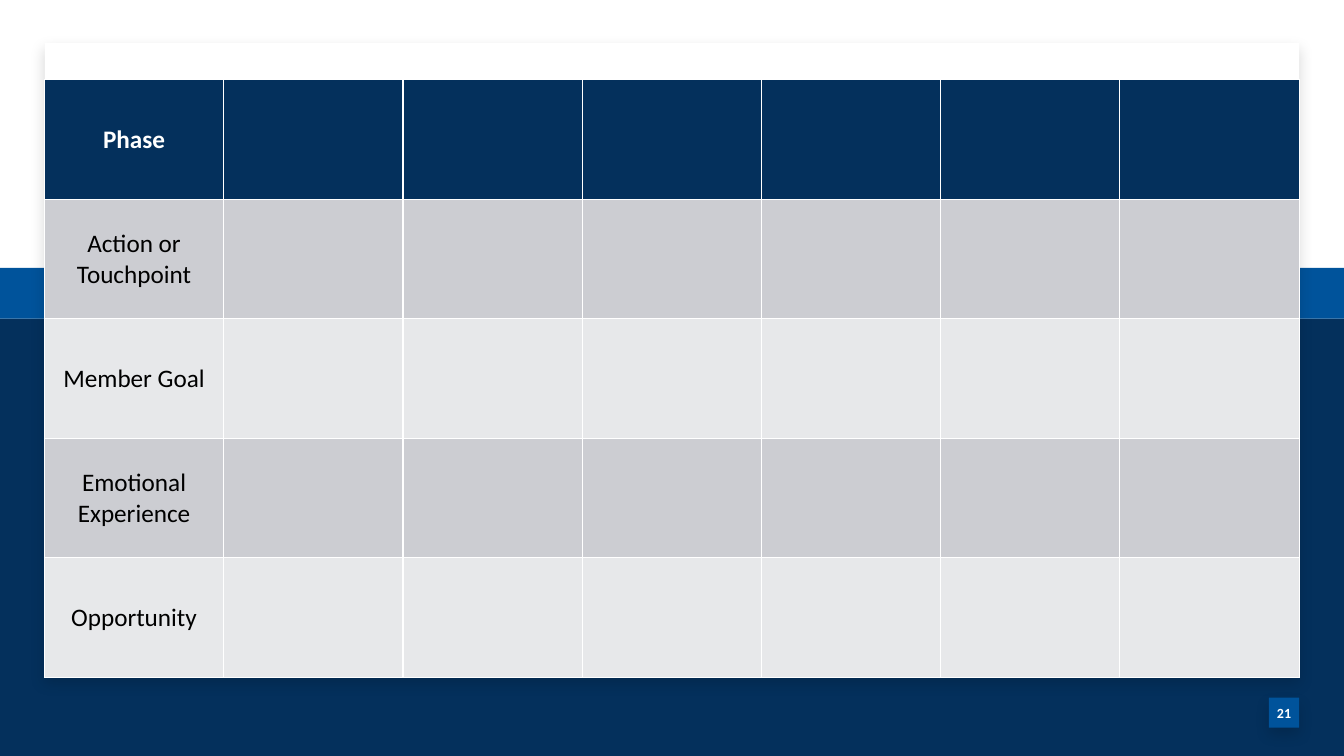
import pptx
import pptx.util
import pptx.dml.color
import pptx.enum.shapes
import pptx.enum.text
import pptx.oxml
import pptx.oxml.ns

Cm = pptx.util.Cm
Pt = pptx.util.Pt
CENTER = pptx.enum.text.PP_ALIGN.CENTER
MIDDLE = pptx.enum.text.MSO_ANCHOR.MIDDLE
NAVY, BLUE, WHITE, BLACK = "04305C", "00539B", "FFFFFF", "000000"
BANDS = ["CCCDD2", "E7E8EA"]
SHADOW = (
    f'<a:effectLst {pptx.oxml.ns.nsdecls("a")}>'
    f'<a:outerShdw blurRad="{Pt(10)}" dist="{Pt(5)}" dir="5400000" algn="t" rotWithShape="0">'
    f'<a:srgbClr val="{BLACK}"><a:alpha val="15000"/></a:srgbClr>'
    '</a:outerShdw></a:effectLst>'
)


def paint(fill, color):
    fill.solid()
    fill.fore_color.rgb = pptx.dml.color.RGBColor.from_string(color)


def write(frame, text, size, color, bold):
    """Put one centred run into a text frame."""
    para = frame.paragraphs[0]
    para.alignment = CENTER
    run = para.add_run()
    run.text = text
    run.font.name = "Calibri"
    run.font.size = Pt(size)
    run.font.bold = bold
    paint(run.font.fill, color)


deck = pptx.Presentation()
deck.slide_width, deck.slide_height = Cm(33.87), Cm(19.05)
slide = deck.slides.add_slide(deck.slide_layouts[6])

# Background bands, white card and page badge
blocks = [
    (0, 8.03, 33.87, 11.02, NAVY, False),
    (0, 6.75, 33.87, 1.28, BLUE, False),
    (1.13, 1.08, 31.61, 15.96, WHITE, True),
    (31.98, 17.58, 0.76, 0.76, BLUE, True),
]
for left, top, width, height, color, raised in blocks:
    block = slide.shapes.add_shape(
        pptx.enum.shapes.MSO_SHAPE.RECTANGLE,
        Cm(left), Cm(top), Cm(width), Cm(height))
    paint(block.fill, color)
    block.line.fill.background()
    if raised:
        block.element.spPr.append(pptx.oxml.parse_xml(SHADOW))
    else:
        block.shadow.inherit = False

# The badge is the last block drawn
badge = block.text_frame
badge.margin_left = badge.margin_right = badge.margin_top = badge.margin_bottom = 0
badge.vertical_anchor = MIDDLE
badge.word_wrap = True
write(badge, "21", 10, WHITE, True)

# Journey table; its style draws the white borders
labels = ["Phase", "Action or Touchpoint", "Member Goal",
          "Emotional Experience", "Opportunity"]
cols = 7
table = slide.shapes.add_table(
    len(labels), cols, Cm(1.12), Cm(2.01), Cm(31.62), Cm(15.06)).table
for row, label in enumerate(labels):
    head = row == 0
    for col in range(cols):
        cell = table.cell(row, col)
        paint(cell.fill, NAVY if head else BANDS[(row - 1) % 2])
        cell.vertical_anchor = MIDDLE
    write(table.cell(row, 0).text_frame, label, 18, WHITE if head else BLACK, head)

deck.save("out.pptx")
